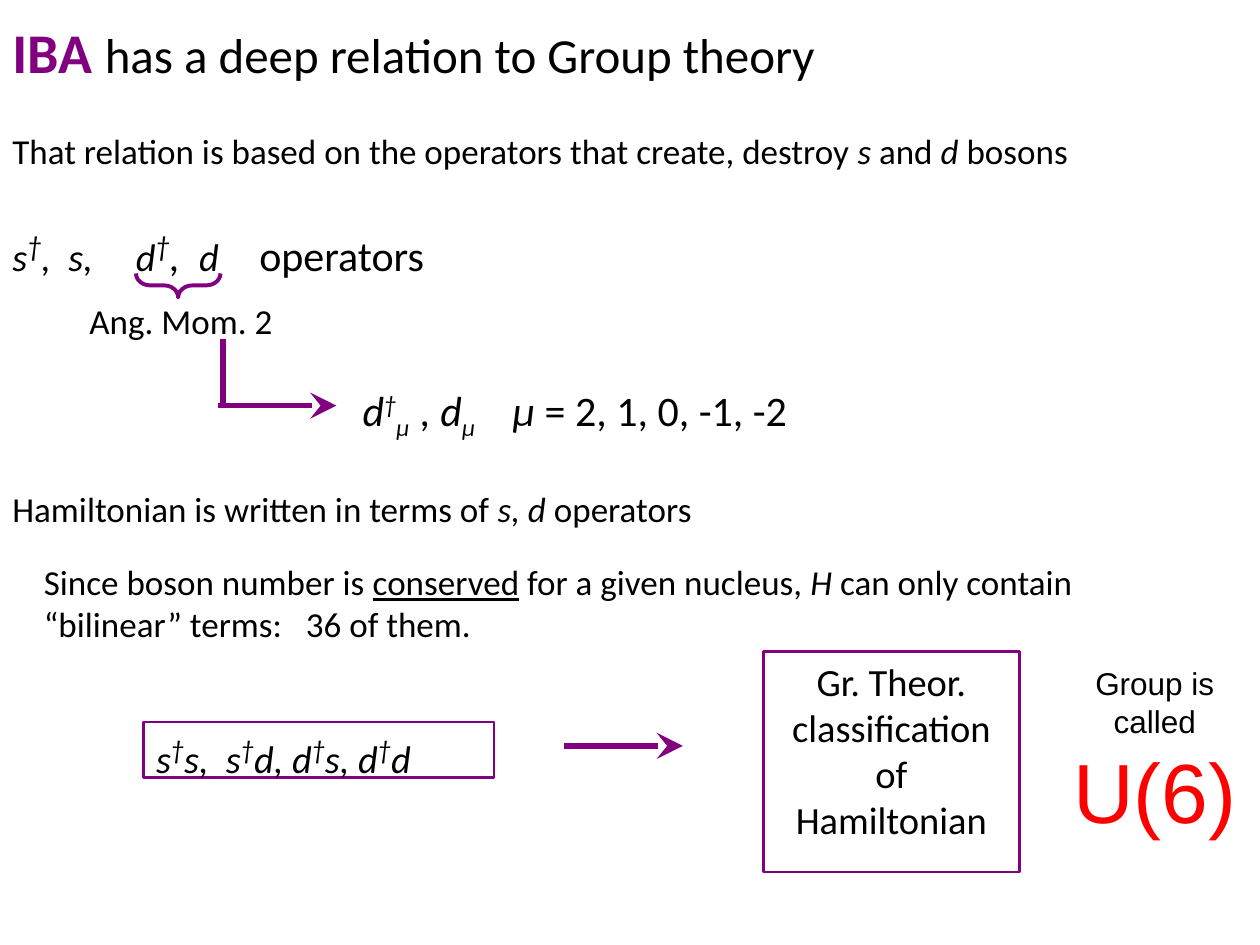
from lxml import etree
from pptx import Presentation, util as u
from pptx.dml.color import RGBColor
from pptx.enum import shapes, text
from pptx.oxml.ns import qn

PX = u.Inches(1) // 100  # one px is a hundredth of an inch
HUE = {"ink": "000000", "mark": "800080", "alert": "FF0000"}
UP, DOWN = 30000, -25000


def rgb(name):
    return RGBColor.from_string(HUE[name])


class Page:
    def __init__(self, deck, font="Calibri"):
        self.slide = deck.slides.add_slide(deck.slide_layouts[6])
        self.font = font

    def area(self, *nums):
        return [n * PX for n in nums]

    def run(self, para, words, size, hue="ink", italic=False, bold=False,
            under=False, base=0, font=None):
        run = para.add_run()
        run.text = words
        face = run.font
        face.name, face.size = font or self.font, u.Pt(size)
        face.color.rgb = rgb(hue)
        face.italic, face.bold, face.underline = italic, bold, under
        if base:
            run._r.get_or_add_rPr().set("baseline", str(base))

    def fill(self, frame, lines, mid=False, center=False, after=0, tabs=()):
        """Each line is a list of (words, size, style) runs."""
        frame.word_wrap = True
        frame.vertical_anchor = (text.MSO_ANCHOR.MIDDLE if mid
                                 else text.MSO_ANCHOR.TOP)
        for num, runs in enumerate(lines):
            para = frame.add_paragraph() if num else frame.paragraphs[0]
            para.alignment = text.PP_ALIGN.CENTER if center else text.PP_ALIGN.LEFT
            para.space_after = u.Pt(after)
            if tabs:
                stops = etree.SubElement(para._p.get_or_add_pPr(), qn("a:tabLst"))
                for pos in tabs:
                    etree.SubElement(stops, qn("a:tab"), pos=str(pos * PX), algn="l")
            for words, size, style in runs:
                self.run(para, words, size, **style)

    def text(self, area, lines, inset=10, **opts):
        frame = self.slide.shapes.add_textbox(*self.area(*area)).text_frame
        frame.margin_left = inset * PX
        self.fill(frame, lines, **opts)

    def shape(self, kind, area, width):
        item = self.slide.shapes.add_shape(kind, *self.area(*area))
        item.shadow.inherit = False
        item.fill.background()
        item.line.color.rgb = rgb("mark")
        item.line.width = u.Pt(width)
        return item

    def box(self, area, lines, **opts):
        item = self.shape(shapes.MSO_SHAPE.RECTANGLE, area, 1.5)
        self.fill(item.text_frame, lines, after=10, **opts)

    def brace(self, area, turn):
        item = self.shape(shapes.MSO_SHAPE.LEFT_BRACE, area, 2.25)
        item.rotation = turn
        item.adjustments[0] = 0.59

    def line(self, ends, arrow=False):
        item = self.slide.shapes.add_connector(
            shapes.MSO_CONNECTOR.STRAIGHT, *self.area(*ends))
        item.line.color.rgb = rgb("mark")
        item.line.width = u.Pt(3)
        if arrow:
            etree.SubElement(item.line._get_or_add_ln(), qn("a:tailEnd"),
                             type="stealth", w="lg", len="lg")
        etree.SubElement(item._element.spPr, qn("a:effectLst"))


def plain(words, size=20, **style):
    return words, size, style


def slant(words, size=20, **style):
    return words, size, dict(style, italic=True)


def dagger(size):
    return slant("†", size, base=UP)


def main():
    deck = Presentation()
    deck.slide_width, deck.slide_height = 1000 * PX, 750 * PX
    page = Page(deck)

    # Title and premise
    page.text((0, 9, 660, 63), [[
        plain("IBA ", 32, hue="mark", bold=True),
        plain("has a deep relation to Group theory", 28)]], mid=True)
    page.text((0, 98, 1000, 43), [[
        plain("That relation is based on the operators that create, destroy "),
        slant("s"), plain(" and "), slant("d"), plain(" bosons")]], mid=True)

    # Operators with their angular momentum
    page.text((0, 175, 353, 50), [[
        slant("s", 22), dagger(28), slant(",  s,\td", 22), dagger(28),
        slant(",  ", 24), slant("d\t", 22), plain("operators", 24)]],
        mid=True, tabs=(98, 196))
    page.brace((132, 193, 19, 67), 270)
    page.text((42, 233, 267, 43), [[plain("Ang. Mom. 2")]], inset=29, mid=True)

    # Components of the d operators
    page.line((177, 269, 177, 320))
    page.line((173, 322, 267, 322), arrow=True)
    page.text((278, 300, 366, 50), [[
        slant("d", 24), dagger(24), slant("μ  ", 24, base=DOWN),
        slant(", d", 24), slant("μ", 24, base=DOWN), slant("\tμ", 24),
        plain(" = 2, 1, 0, -1, -2", 24)]], tabs=(119,))

    # Hamiltonian
    page.text((0, 382, 562, 43), [[
        plain("Hamiltonian is written in terms of "), slant("s, d"),
        plain(" operators")]], mid=True)
    page.text((25, 440, 900, 77), [[
        plain("Since boson number is "), plain("conserved", under=True),
        plain(" for a given nucleus, "), slant("H"),
        plain(" can only contain “bilinear” terms:\t36 of them.")]],
        mid=True, tabs=(208,))

    # Bilinear terms lead to the group
    terms = [slant("s", 22)]
    for words in ("s,  s", "d, d", "s, d", "d"):
        terms += [dagger(26), slant(words, 22)]
    page.box((114, 573, 278, 44), [terms])
    page.line((448, 592, 542, 592), arrow=True)
    page.box((606, 517, 203, 175), [[
        plain("Gr. Theor. classification of Hamiltonian", 22)]], center=True)
    page.text((833, 522, 167, 180), [
        [plain("Group is called", 18, font="Arial")],
        [plain("U(6)", 48, hue="alert", font="Arial")]], center=True)

    deck.save("out.pptx")


if __name__ == "__main__":
    main()
